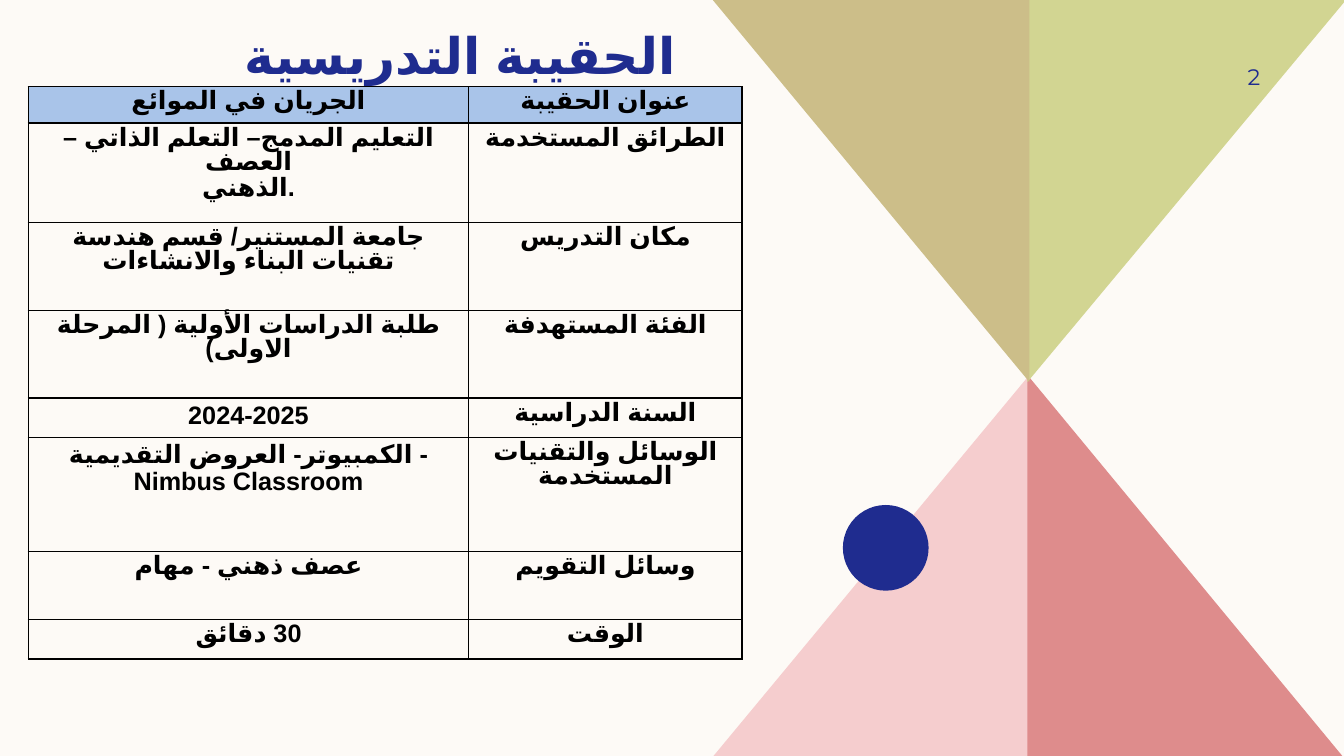
from dataclasses import dataclass

from lxml.etree import SubElement
from pptx import Presentation
from pptx.dml.color import RGBColor
from pptx.enum.lang import MSO_LANGUAGE_ID as LANG
from pptx.enum.shapes import MSO_SHAPE
from pptx.enum.text import MSO_ANCHOR as ANCHOR, PP_ALIGN as ALIGN
from pptx.oxml.ns import qn
from pptx.slide import Slide
from pptx.text.text import _Paragraph as Paragraph
from pptx.util import Inches, Pt

COLORS = {
    "background": "FDFAF6", "navy": "1F2C8F", "black": "000000",
    "header": "A9C4E9", "pink": "F5CDCE", "rose": "DE8C8C",
    "lime": "D2D592", "khaki": "CCBE89",
}


@dataclass
class Triangle:
    outer_x: float
    inner_x: float
    base_y: float
    apex_y: float
    color: str


@dataclass
class Label:
    box: tuple[float, float, float, float]
    text: str
    size: float
    bold: bool
    align: ALIGN
    frame: dict


@dataclass
class Row:
    height: float
    detail: str
    heading: str
    rtl: bool = False
    top: float = 0.04


TRIANGLES = [
    Triangle(7.06, 10.21, 7.52, 3.72, "pink"),
    Triangle(13.33, 10.19, 7.52, 3.72, "rose"),
    Triangle(13.35, 10.19, 0, 3.79, "lime"),
    Triangle(7.07, 10.21, 0, 3.79, "khaki"),
]
LABELS = [
    Label((2.33, -0.04, 5.57, 0.88), "الحقيبة التدريسية", 36, True, ALIGN.LEFT,
          {"vertical_anchor": ANCHOR.BOTTOM, "margin_top": 0, "margin_bottom": 0}),
    Label((11.33, 0.5, 1.17, 0.52), "2", 16, False, ALIGN.RIGHT,
          {"vertical_anchor": ANCHOR.MIDDLE, "margin_right": 0}),
]
COLUMN_WIDTHS = (4.37, 2.71)
ROWS = [
    Row(0.36, "الجريان في الموائع", "عنوان الحقيبة"),
    Row(0.99, "التعليم المدمج– التعلم الذاتي – العصف\nالذهني.", "الطرائق المستخدمة"),
    Row(0.87, "جامعة المستنير/ قسم هندسة تقنيات البناء والانشاءات", "مكان التدريس"),
    Row(0.87, "طلبة الدراسات الأولية ( المرحلة الاولى)", "الفئة المستهدفة"),
    Row(0.39, "2024-2025", "السنة الدراسية", top=0.07),
    Row(1.13, "الكمبيوتر- العروض التقديمية -\nNimbus Classroom",
        "الوسائل والتقنيات المستخدمة", top=0.07),
    Row(0.68, "عصف ذهني - مهام", "وسائل التقويم"),
    Row(0.39, "30 دقائق", "الوقت", rtl=True),
]


def rgb(name: str) -> RGBColor:
    return RGBColor.from_string(COLORS[name])


def paint(s, color: str) -> None:
    s.shadow.inherit = False
    s.fill.solid()
    s.fill.fore_color.rgb = rgb(color)
    s.line.fill.background()


def style_text(p: Paragraph, font: str, size: float, bold: bool, color: str) -> None:
    formats = {"name": font, "size": Pt(size), "bold": bold,
               "language_id": LANG.ARABIC_IRAQ}
    for r in p.runs:
        for name, value in formats.items():
            setattr(r.font, name, value)
        r.font.color.rgb = rgb(color)
        # Arabic letters take the complex-script font
        SubElement(r.font._element, qn("a:cs"), typeface=font)


def draw_triangle(slide: Slide, t: Triangle) -> None:
    fb = slide.shapes.build_freeform(Inches(t.inner_x), Inches(t.apex_y))
    fb.add_line_segments([(Inches(t.outer_x), Inches(t.base_y)),
                          (Inches(t.inner_x), Inches(t.base_y))])
    paint(fb.convert_to_shape(), t.color)


def draw_label(slide: Slide, label: Label) -> None:
    tf = slide.shapes.add_textbox(*map(Inches, label.box)).text_frame
    tf.word_wrap = True
    for name, value in label.frame.items():
        setattr(tf, name, value)
    p = tf.paragraphs[0]
    p.text, p.alignment = label.text, label.align
    style_text(p, "Montserrat", label.size, label.bold, "navy")


def fill_cell(cell, text: str, top: float, rtl: bool, header: bool) -> None:
    cell.margin_top, cell.margin_bottom = Inches(top), 0
    cell.text = text
    for i, p in enumerate(cell.text_frame.paragraphs):
        p.alignment, p.line_spacing = ALIGN.CENTER, 0.85
        p.space_before = Pt(2 if i else 0)
        if rtl:
            p._p.get_or_add_pPr().set("rtl", "1")
        style_text(p, "Arial", 18, True, "black")
    # Borders come before the fill in the cell properties
    props = cell._tc.get_or_add_tcPr()
    for side in ("lnL", "lnR", "lnT", "lnB"):
        line = SubElement(props, qn(f"a:{side}"), w=str(Pt(1)))
        fill = SubElement(line, qn("a:solidFill"))
        SubElement(fill, qn("a:srgbClr"), val=COLORS["black"])
    if header:
        cell.fill.solid()
        cell.fill.fore_color.rgb = rgb("header")
    else:
        cell.fill.background()


def draw_table(slide: Slide) -> None:
    table = slide.shapes.add_table(
        len(ROWS), len(COLUMN_WIDTHS), Inches(0.28), Inches(0.86),
        Inches(sum(COLUMN_WIDTHS)), Inches(sum(row.height for row in ROWS))).table
    table.horz_banding = False
    for column, width in zip(table.columns, COLUMN_WIDTHS):
        column.width = Inches(width)
    for i, row in enumerate(ROWS):
        table.rows[i].height = Inches(row.height)
        fill_cell(table.cell(i, 0), row.detail, row.top, row.rtl, i == 0)
        fill_cell(table.cell(i, 1), row.heading, 0.04, False, i == 0)


def main() -> None:
    prs = Presentation()
    prs.slide_width, prs.slide_height = Inches(13.33), Inches(7.5)
    slide = prs.slides.add_slide(prs.slide_layouts[6])
    slide.background.fill.solid()
    slide.background.fill.fore_color.rgb = rgb("background")

    # Hourglass of triangles with a dot
    for triangle in TRIANGLES:
        draw_triangle(slide, triangle)
    dot = slide.shapes.add_shape(MSO_SHAPE.OVAL, *map(Inches, (8.36, 5.01, 0.85, 0.85)))
    paint(dot, "navy")

    # Title, slide number and table
    for label in LABELS:
        draw_label(slide, label)
    draw_table(slide)
    prs.save("out.pptx")


if __name__ == "__main__":
    main()
